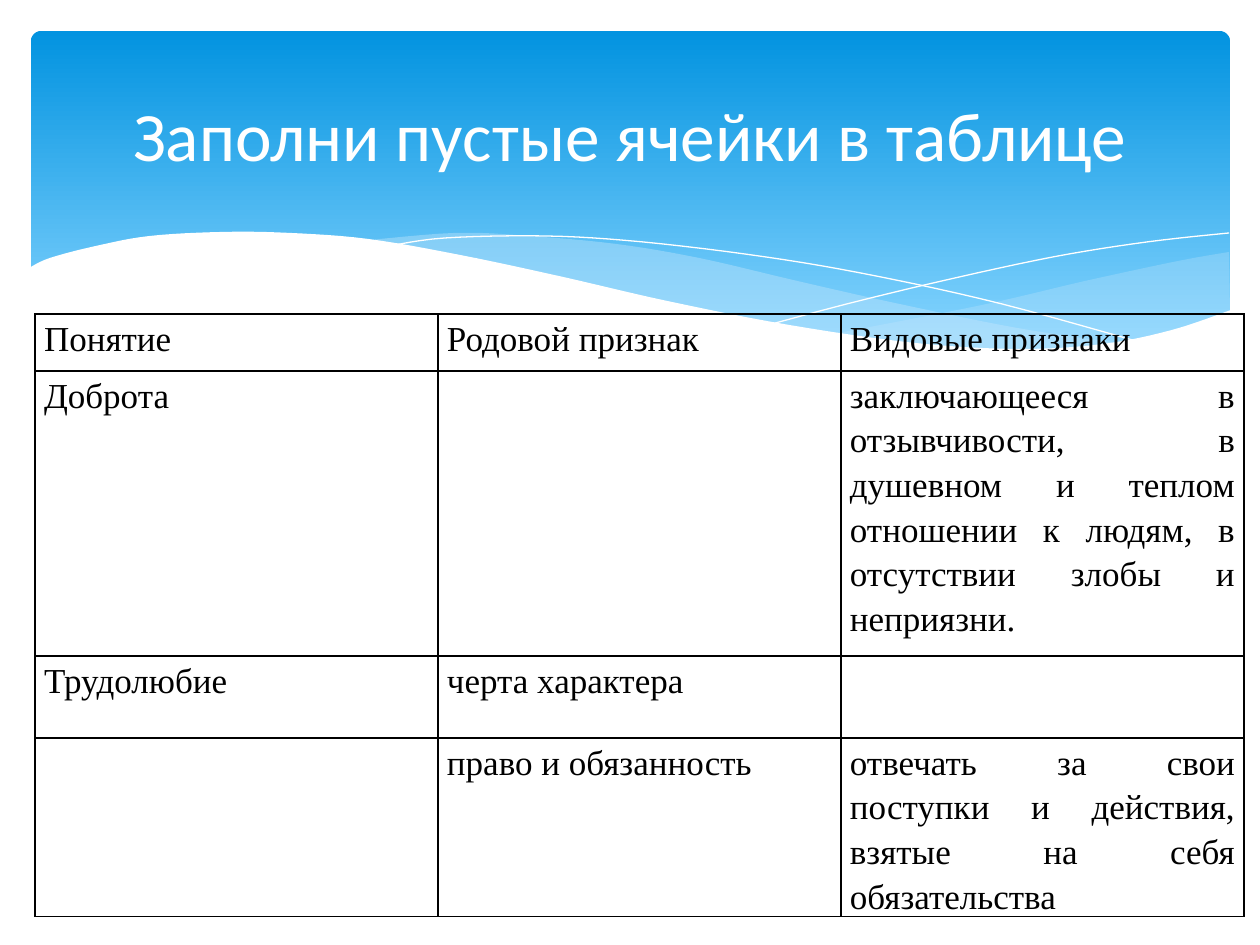
from lxml.etree import SubElement as Sub
from pptx import Presentation
from pptx.dml.color import RGBColor as Rgb
from pptx.enum.shapes import MSO_SHAPE as Kind
from pptx.enum.text import MSO_ANCHOR as Anchor, PP_ALIGN as Align
from pptx.oxml.ns import qn
from pptx.util import Pt

# Content
TITLE = "Заполни пустые ячейки в таблице"
ROWS = [
    ("Понятие", "Родовой признак", "Видовые признаки"),
    ("Доброта", "", "заключающееся в отзывчивости, в душевном и теплом "
     "отношении к людям, в отсутствии злобы и неприязни."),
    ("Трудолюбие", "черта характера", ""),
    ("", "право и обязанность", "отвечать за свои поступки и действия, "
     "взятые на себя обязательства"),
]

# Places in px, 126 to the inch
PX = 914400 / 126
BANNER = (31, 31, 1199, 340)
HEAD = (63, 47, 1134, 173)
GRID = (35, 314)
COL, HIGH = 403, (57, 285, 82, 171)
INSET = 9

THEME = {
    "sky": (("0293E0", 0), ("83D3FE", 0.9)), "mist": "C6E7FC",
    "white": "FFFFFF", "ink": "000000",
    "head": {"name": "Calibri", "size": Pt(39.6)},
    "body": {"name": "Times New Roman", "size": Pt(20)},
}

# Each wave is a list of smooth edges, drawn one after another
RIGHT = [
    [(1229, 252), (1178, 261), (1085, 281), (982, 305), (833, 334)],
    [(833, 334), (906, 343), (984, 349), (1052, 349), (1120, 343),
     (1178, 330), (1230, 311)],
]
LEFT = [
    [(1125, 344), (1017, 328), (890, 302), (793, 280), (699, 258),
     (616, 244), (529, 236), (455, 233), (360, 241)],
    [(360, 241), (456, 256), (566, 280), (668, 302), (779, 325),
     (876, 340), (959, 349), (1031, 350), (1125, 344)],
]
FALL = [[(389, 246), (445, 238), (546, 236), (643, 242), (766, 257),
         (876, 276), (1002, 304), (1143, 343)]]
RISE = [[(772, 324), (847, 304), (942, 281), (1053, 257), (1147, 242),
         (1229, 233)]]
FRONT = [
    [(1231, 310), (1172, 330), (1103, 344), (1019, 349), (915, 343),
     (789, 325), (667, 301), (563, 277), (460, 255), (368, 239), (290, 233),
     (223, 232), (150, 236), (96, 246), (50, 258), (29, 268)],
    [(29, 415), (1231, 415)],
]
WAVES = [  # edges, fill, opacity in percent
    (RIGHT, "mist", 29), (LEFT, "mist", 40),
    (FALL, None, 0), (RISE, None, 0), (FRONT, "white", 100),
]


def emu(*vals):
    return [round(v * PX) for v in vals]


def tint(name):
    return Rgb.from_string(THEME[name])


def style(obj, vals):
    for key, val in vals.items():
        setattr(obj, key, val)


def smooth(knots, steps=6):
    """Points of a Catmull-Rom curve through the knots."""
    ends = [knots[0], *knots, knots[-1]]
    dots = [knots[0]]
    for a, b, c, d in zip(ends, ends[1:], ends[2:], ends[3:]):
        for t in (n / steps for n in range(1, steps + 1)):
            dots.append(tuple(
                (2 * q + (r - p) * t + (2 * p - 5 * q + 4 * r - s) * t ** 2
                 + (3 * q - p - 3 * r + s) * t ** 3) / 2
                for p, q, r, s in zip(a, b, c, d)))
    return dots


def wave(shapes, edges, fill, alpha):
    dots = [emu(*dot) for edge in edges for dot in smooth(edge)]
    pen = shapes.build_freeform(*dots[0], scale=1.0)
    pen.add_line_segments(dots[1:], close=bool(fill))
    shape = pen.convert_to_shape()
    shape.shadow.inherit = False
    if not fill:
        shape.fill.background()
        shape.line.color.rgb = tint("white")
        shape.line.width = 0
        return
    shape.line.fill.background()
    shape.fill.solid()
    shape.fill.fore_color.rgb = tint(fill)
    if alpha < 100:
        tone = shape._element.spPr.find(".//" + qn("a:srgbClr"))
        Sub(tone, qn("a:alpha"), val=str(alpha * 1000))


def write(para, text, font, color, **form):
    style(para, form)
    run = para.add_run()
    run.text = text
    style(run.font, THEME[font])
    run.font.color.rgb = tint(color)


def border(cell):
    props = cell._tc.get_or_add_tcPr()
    for spot, side in enumerate(("lnL", "lnR", "lnT", "lnB")):
        line = props.makeelement(qn("a:" + side), {"w": str(Pt(1))})
        Sub(Sub(line, qn("a:solidFill")), qn("a:srgbClr"), val=THEME["ink"])
        props.insert(spot, line)


deck = Presentation()
deck.slide_width, deck.slide_height = emu(1260, 945)
shapes = deck.slides.add_slide(deck.slide_layouts[6]).shapes

# Banner
banner = shapes.add_shape(Kind.ROUNDED_RECTANGLE, *emu(*BANNER))
banner.adjustments[0] = 0.03
banner.shadow.inherit = False
banner.line.fill.background()
banner.fill.gradient()
banner.fill.gradient_angle = 270
for stop, (color, spot) in zip(banner.fill.gradient_stops, THEME["sky"]):
    stop.color.rgb = Rgb.from_string(color)
    stop.position = spot

# Waves
for item in WAVES:
    wave(shapes, *item)

# Table
wide = COL * len(ROWS[0])
grid = shapes.add_table(len(ROWS), len(ROWS[0]),
                        *emu(*GRID, wide, sum(HIGH))).table
style(grid, {"first_row": False, "horz_banding": False})
for col in grid.columns:
    col.width, = emu(COL)
side, = emu(INSET)
for row, high, texts in zip(grid.rows, HIGH, ROWS):
    row.height, = emu(high)
    for cell, text in zip(row.cells, texts):
        style(cell, {"margin_left": side, "margin_right": side,
                     "margin_top": 0, "margin_bottom": 0})
        cell.fill.background()
        border(cell)
        if text:
            write(cell.text_frame.paragraphs[0], text, "body", "ink",
                  alignment=Align.JUSTIFY, line_spacing=1.15,
                  space_after=Pt(10))

# Title
frame = shapes.add_textbox(*emu(*HEAD)).text_frame
style(frame, {"word_wrap": True, "vertical_anchor": Anchor.MIDDLE})
write(frame.paragraphs[0], TITLE, "head", "white", alignment=Align.CENTER)

deck.save("out.pptx")
